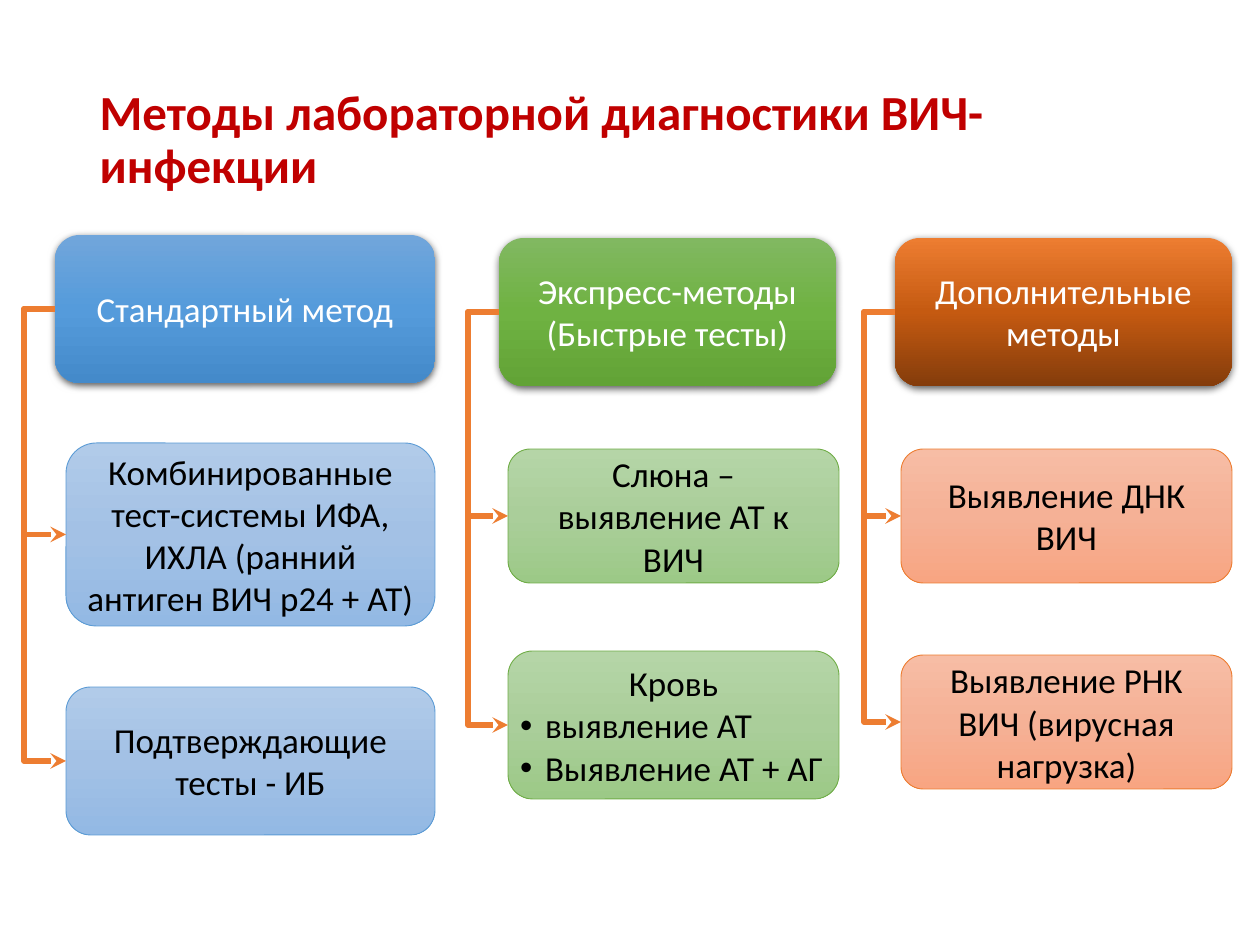
import copy
from dataclasses import dataclass

import pptx
import pptx.dml.color
import pptx.enum.shapes
import pptx.enum.text
import pptx.oxml.ns
import pptx.util
from lxml import etree

qn = pptx.oxml.ns.qn
ALIGN = pptx.enum.text.PP_ALIGN
EMU_PER_PX = 914400 / 126


@dataclass(frozen=True)
class Theme:
    """Colours and type sizes of the slide."""
    font: str = "Calibri"
    title_size: int = 28
    box_size: int = 20
    title: str = "C00000"
    on_header: str = "FFFFFF"
    on_item: str = "000000"
    arrow: str = "ED7D31"
    blue: tuple = (("71A6DB", "559BDB", "448ACA"), ("B1CBE9", "A3C1E5", "93B9E4"), "5B9BD5")
    green: tuple = (("81B861", "6FB242", "62A336"), ("B5D5A7", "AACE9A", "9CC987"), "70AD47")
    orange: tuple = (("ED7D31", "C55A11", "843C0B"), ("F7BDA5", "F5B196", "F8A582"), "ED7D31")


THEME = Theme()


def px(length):
    """Turn whole pixels into EMU."""
    return pptx.util.Emu(round(length * EMU_PER_PX))


def rgb(value):
    """Turn a hex string into a colour."""
    return pptx.dml.color.RGBColor.from_string(value)


def write_text(paragraph, text, *, size, color, bold=False, align=ALIGN.CENTER,
               bullet=False, spacing=None):
    """Fill one paragraph with formatted text."""
    if bullet:
        properties = paragraph._p.get_or_add_pPr()
        properties.set("marL", str(px(25)))
        properties.set("indent", str(-px(25)))
        etree.SubElement(properties, qn("a:buFont"), typeface="Arial")
        etree.SubElement(properties, qn("a:buChar"), char="•")
    paragraph.alignment = align
    paragraph.line_spacing = spacing
    run = paragraph.add_run()
    run.text = text
    run.font.name = THEME.font
    run.font.size = pptx.util.Pt(size)
    run.font.bold = bold
    run.font.color.rgb = rgb(color)


def fill_gradient(shape, colors):
    """Fill a shape with three colours from top to bottom."""
    shape.fill.gradient()
    shape.fill.gradient_angle = 270
    stops = shape._element.spPr.find(".//" + qn("a:gsLst"))
    stops.insert(1, copy.deepcopy(stops[0]))
    for stop, position, color in zip(shape.fill.gradient_stops, (0, 0.5, 1), colors):
        stop.position = position
        stop.color.rgb = rgb(color)


def cast_shadow(shape):
    """Put a soft shadow below a shape."""
    effects = shape._element.spPr.find(qn("a:effectLst"))
    shadow = etree.SubElement(effects, qn("a:outerShdw"), blurRad="57150", dist="19050",
                              dir="5400000", algn="ctr", rotWithShape="0")
    black = etree.SubElement(shadow, qn("a:srgbClr"), val="000000")
    etree.SubElement(black, qn("a:alpha"), val="63000")


def add_box(slide, box, lines, gradient, text_color, outline=None):
    """Add a rounded box; lines after the first are bullets."""
    rounded = slide.shapes.add_shape(
        pptx.enum.shapes.MSO_SHAPE.ROUNDED_RECTANGLE, *map(px, box))
    rounded.shadow.inherit = False
    fill_gradient(rounded, gradient)
    if outline:
        rounded.line.color.rgb = rgb(outline)
        rounded.line.width = pptx.util.Pt(0.5)
    else:
        rounded.line.fill.background()
        cast_shadow(rounded)
    frame = rounded.text_frame
    frame.word_wrap = True
    frame.vertical_anchor = pptx.enum.text.MSO_ANCHOR.MIDDLE
    if len(lines) > 1:
        frame.margin_left = frame.margin_right = px(5)
    for index, line in enumerate(lines):
        paragraph = frame.add_paragraph() if index else frame.paragraphs[0]
        write_text(paragraph, line, size=THEME.box_size, color=text_color, bullet=index > 0,
                   align=ALIGN.LEFT if index else ALIGN.CENTER)
    return rounded


def add_branch(slide, header, item):
    """Join the left sides of two boxes by a bent arrow."""
    branch = slide.shapes.add_connector(pptx.enum.shapes.MSO_CONNECTOR.ELBOW, 0, 0, 0, 0)
    branch.begin_connect(header, 1)
    branch.end_connect(item, 1)
    branch.line.color.rgb = rgb(THEME.arrow)
    branch.line.width = pptx.util.Pt(3)
    properties = branch._element.spPr
    etree.SubElement(branch.line._get_or_add_ln(), qn("a:tailEnd"), type="stealth")
    etree.SubElement(properties, qn("a:effectLst"))
    bend = round(-px(31) / branch.width * 100000)
    adjustments = properties.find(qn("a:prstGeom")).get_or_add_avLst()
    etree.SubElement(adjustments, qn("a:gd"), name="adj1", fmla=f"val {bend}")


def add_title(slide, box, text):
    """Place the slide title."""
    title = slide.shapes.title
    title.left, title.top, title.width, title.height = map(px, box)
    title.text_frame.vertical_anchor = pptx.enum.text.MSO_ANCHOR.MIDDLE
    write_text(title.text_frame.paragraphs[0], text, size=THEME.title_size,
               color=THEME.title, bold=True, align=ALIGN.LEFT, spacing=0.9)


def add_method(slide, box, palette, heading, items, indent, heading_width):
    """Add a column: a heading and the items that branch from it."""
    left, top, width = box
    strong, pale, outline = palette
    header = add_box(slide, (left, top, heading_width, 148), [heading], strong, THEME.on_header)
    for offset, height, lines in items:
        item = add_box(slide, (left + indent, top + offset, width - indent, height),
                       lines, pale, THEME.on_item, outline)
        add_branch(slide, header, item)


def main():
    """Build and save the slide."""
    deck = pptx.Presentation()
    deck.slide_width, deck.slide_height = px(1260), px(945)
    slide = deck.slides.add_slide(deck.slide_layouts[5])
    add_title(slide, (87, 50, 1086, 183), "Методы лабораторной диагностики ВИЧ-инфекции")
    add_method(slide, (55, 235, 380), THEME.blue, "Стандартный метод", [
        (208, 183, ["Комбинированные тест-системы ИФА, ИХЛА (ранний антиген ВИЧ р24 + АТ)"]),
        (452, 148, ["Подтверждающие тесты - ИБ"]),
    ], indent=11, heading_width=380)
    add_method(slide, (499, 238, 340), THEME.green, "Экспресс-методы (Быстрые тесты)", [
        (211, 134, ["Слюна – выявление АТ к ВИЧ"]),
        (413, 148, ["Кровь", "выявление АТ", "Выявление АТ + АГ"]),
    ], indent=9, heading_width=337)
    add_method(slide, (895, 238, 337), THEME.orange, "Дополнительные методы", [
        (211, 134, ["Выявление ДНК ВИЧ"]),
        (417, 134, ["Выявление РНК ВИЧ (вирусная нагрузка)"]),
    ], indent=6, heading_width=337)
    deck.save("out.pptx")


if __name__ == "__main__":
    main()
